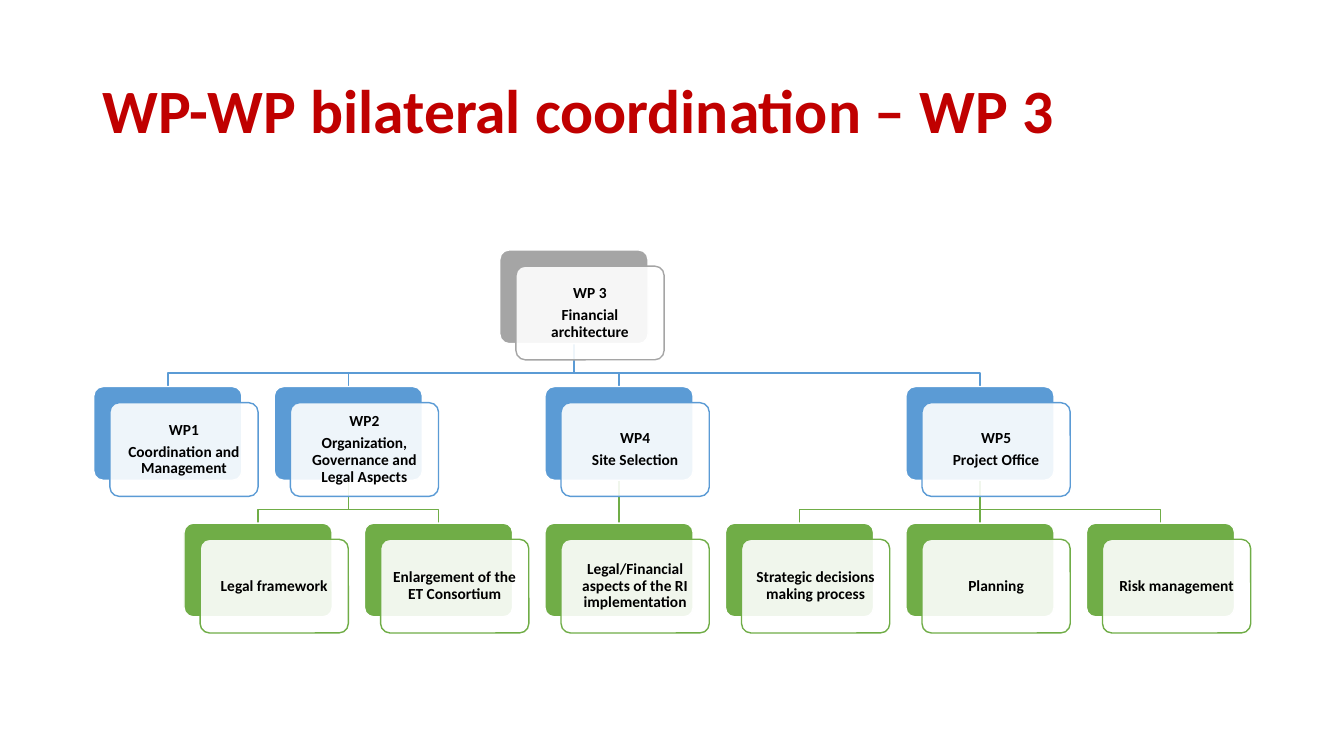
from lxml import etree
from pptx import Presentation
from pptx.dml.color import RGBColor
from pptx.enum.shapes import MSO_CONNECTOR, MSO_SHAPE
from pptx.enum.text import MSO_ANCHOR, PP_ALIGN
from pptx.oxml.ns import qn
from pptx.util import Inches, Pt

BOX_WIDTH, BOX_HEIGHT = 1.47, 0.93
CARD_OFFSET = 0.16
LEFT, COLUMN_STEP = 0.93, 1.79
TOP, LEVEL_STEP = 2.48, 1.355
BEND = 0.29  # distance from the parent box down to the horizontal line
LEVEL_COLORS = ["A5A5A5", "5B9BD5", "70AD47"]

# name: (level, column, parent, lines of text)
work_packages = {
    "WP3": (0, 2.25, None, ["WP 3", "Financial architecture"]),
    "WP1": (1, 0, "WP3", ["WP1", "Coordination and Management"]),
    "WP2": (1, 1, "WP3", ["WP2", "Organization, Governance and Legal Aspects"]),
    "framework": (2, 0.5, "WP2", ["Legal framework"]),
    "enlargement": (2, 1.5, "WP2", ["Enlargement of the ET Consortium"]),
    "WP4": (1, 2.5, "WP3", ["WP4", "Site Selection"]),
    "aspects": (2, 2.5, "WP4", ["Legal/Financial aspects of the RI implementation"]),
    "WP5": (1, 4.5, "WP3", ["WP5", "Project Office"]),
    "decisions": (2, 3.5, "WP5", ["Strategic decisions making process"]),
    "planning": (2, 4.5, "WP5", ["Planning"]),
    "risk": (2, 5.5, "WP5", ["Risk management"]),
}


def color(value):
    return RGBColor.from_string(value)


def add_box(left, top, fill, line):
    box = slide.shapes.add_shape(MSO_SHAPE.ROUNDED_RECTANGLE, Inches(left), Inches(top),
                                 Inches(BOX_WIDTH), Inches(BOX_HEIGHT))
    box.adjustments[0] = 0.1
    box.shadow.inherit = False
    box.fill.solid()
    box.fill.fore_color.rgb = color(fill)
    box.line.color.rgb = color(line)
    box.line.width = Pt(1)
    return box


presentation = Presentation()
presentation.slide_width = Inches(13.33)
presentation.slide_height = Inches(7.5)
slide = presentation.slides.add_slide(presentation.slide_layouts[6])

title = slide.shapes.add_textbox(Inches(0.92), Inches(0.4), Inches(11.5), Inches(1.45))
title.text_frame.word_wrap = True
title.text_frame.vertical_anchor = MSO_ANCHOR.MIDDLE
title.text_frame.text = "WP-WP bilateral coordination – WP 3"
title_paragraph = title.text_frame.paragraphs[0]
title_paragraph.line_spacing = 0.9
title_font = title_paragraph.runs[0].font
title_font.name = "Calibri"
title_font.size = Pt(44)
title_font.bold = True
title_font.color.rgb = color("C00000")

# Connecting lines, behind the boxes
for level, column, parent, lines in work_packages.values():
    if parent is None:
        continue
    parent_level, parent_column = work_packages[parent][:2]
    start_x = Inches(LEFT + parent_column * COLUMN_STEP + BOX_WIDTH / 2)
    start_y = Inches(TOP + parent_level * LEVEL_STEP + BOX_HEIGHT)
    end_x = Inches(LEFT + column * COLUMN_STEP + BOX_WIDTH / 2)
    end_y = Inches(TOP + level * LEVEL_STEP)
    if start_x == end_x:
        link = slide.shapes.add_connector(MSO_CONNECTOR.STRAIGHT, start_x, start_y, end_x, end_y)
        etree.SubElement(link._element.spPr, qn("a:effectLst"))
    else:
        bend_y = start_y + Inches(BEND)
        builder = slide.shapes.build_freeform(start_x, start_y)
        builder.add_line_segments([(start_x, bend_y), (end_x, bend_y), (end_x, end_y)], close=False)
        link = builder.convert_to_shape()
        link.fill.background()
        link.shadow.inherit = False
    link.line.color.rgb = color(LEVEL_COLORS[level])
    link.line.width = Pt(1)

# Each work package is a coloured box with a translucent card in front
for level, column, parent, lines in work_packages.values():
    left = LEFT + column * COLUMN_STEP
    top = TOP + level * LEVEL_STEP
    add_box(left, top, LEVEL_COLORS[level], "FFFFFF")
    card = add_box(left + CARD_OFFSET, top + CARD_OFFSET, "FFFFFF", LEVEL_COLORS[level])
    card_color = card._element.spPr.find(qn("a:solidFill")).find(qn("a:srgbClr"))
    etree.SubElement(card_color, qn("a:alpha"), val="90000")

    text_frame = card.text_frame
    text_frame.word_wrap = True
    text_frame.vertical_anchor = MSO_ANCHOR.MIDDLE
    text_frame.margin_left = text_frame.margin_right = Inches(0.07)
    text_frame.margin_top = text_frame.margin_bottom = Inches(0.07)
    text_frame.text = "\n".join(lines)
    for paragraph in text_frame.paragraphs:
        paragraph.alignment = PP_ALIGN.CENTER
        paragraph.line_spacing = 0.9
        paragraph.space_after = Pt(3.85)
        font = paragraph.runs[0].font
        font.name = "Calibri"
        font.size = Pt(11)
        font.bold = True
        font.color.rgb = color("000000")

presentation.save("out.pptx")
